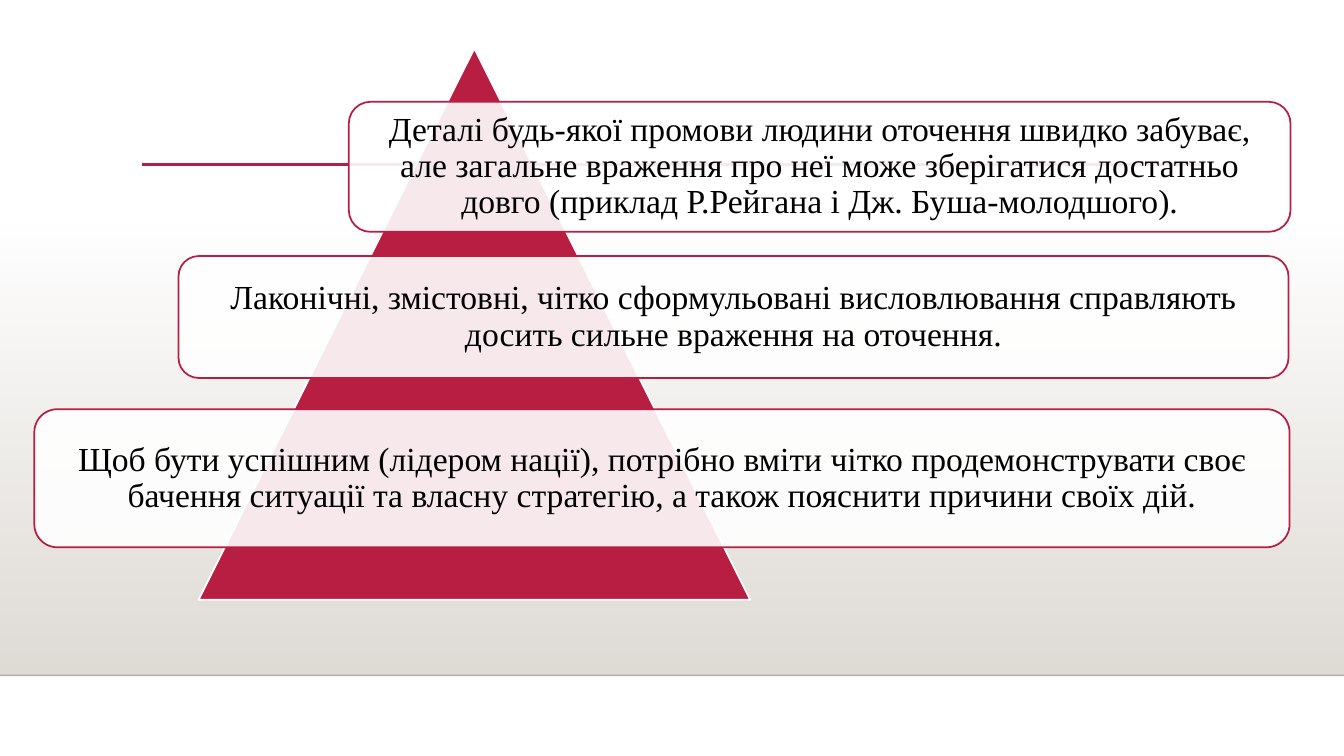
from lxml import etree
from pptx import Presentation
from pptx.dml.color import RGBColor
from pptx.enum import shapes, text
from pptx.oxml import ns
from pptx.util import Inches, Pt

CRIMSON, WHITE, BLACK, SAND = "B71E42", "FFFFFF", "000000", "DFDBD5"
FONT = "Times New Roman"
WIDTH, HEIGHT = 13.33, 7.5

STATEMENTS = [
    ((3.46, 1.01, 9.34, 1.29),
     "Деталі будь-якої промови людини оточення швидко забуває, "
     "але загальне враження про неї може зберігатися достатньо "
     "довго (приклад Р.Рейгана і Дж. Буша-молодшого)."),
    ((1.77, 2.54, 11.01, 1.21),
     "Лаконічні, змістовні, чітко сформульовані висловлювання справляють "
     "досить сильне враження на оточення."),
    ((0.34, 4.06, 12.45, 1.37),
     "Щоб бути успішним (лідером нації), потрібно вміти чітко "
     "продемонструвати своє бачення ситуації та власну стратегію, "
     "а також пояснити причини своїх дій."),
]
RULES = [
    (0, WIDTH, 6.7, BLACK, 1, 20),
    (1.41, 11.92, 1.63, CRIMSON, 2.5, 100),
]


def paint(color_format, color, opacity=100):
    color_format.rgb = RGBColor.from_string(color)


def set_opacity(color_element, percent):
    alpha = etree.SubElement(color_element, ns.qn("a:alpha"))
    alpha.set("val", str(percent * 1000))


def add_shape(kind, box, fill=None, line=None):
    shape = slide.shapes.add_shape(kind, *map(Inches, box))
    shape.shadow.inherit = False
    if fill:
        shape.fill.solid()
        paint(shape.fill.fore_color, fill)
    if line:
        paint(shape.line.color, line)
        shape.line.width = Pt(1.25)
    else:
        shape.line.fill.background()
    return shape


def add_backdrop():
    backdrop = add_shape(shapes.MSO_SHAPE.RECTANGLE, (0, 2.21, WIDTH, 4.49))
    backdrop.fill.gradient()
    backdrop.fill.gradient_angle = 270
    for stop, opacity in zip(backdrop.fill.gradient_stops, (0, 100)):
        paint(stop.color, SAND)
    colors = backdrop._element.spPr.iter(ns.qn("a:srgbClr"))
    for color_element, opacity in zip(list(colors), (0, 100)):
        set_opacity(color_element, opacity)


def add_rule(left, right, y, color, weight, opacity):
    rule = slide.shapes.add_connector(
        shapes.MSO_CONNECTOR.STRAIGHT, *map(Inches, (left, y, right, y)))
    paint(rule.line.color, color)
    rule.line.width = Pt(weight)
    properties = rule._element.spPr
    if opacity < 100:
        set_opacity(properties.find(".//" + ns.qn("a:srgbClr")), opacity)
    etree.SubElement(properties, ns.qn("a:effectLst"))


def add_statement(box, wording):
    card = add_shape(shapes.MSO_SHAPE.ROUNDED_RECTANGLE, box, WHITE, CRIMSON)
    set_opacity(card._element.spPr.find(".//" + ns.qn("a:srgbClr")), 90)
    frame = card.text_frame
    frame.word_wrap = True
    frame.vertical_anchor = text.MSO_ANCHOR.MIDDLE
    frame.margin_left = frame.margin_right = Inches(0.1)
    frame.margin_top = frame.margin_bottom = Inches(0.1)
    paragraph = frame.paragraphs[0]
    paragraph.alignment = text.PP_ALIGN.CENTER
    paragraph.line_spacing = 0.9
    run = paragraph.add_run()
    run.text = wording
    run.font.name = FONT
    run.font.size = Pt(24)
    paint(run.font.color, BLACK)


presentation = Presentation()
presentation.slide_width = Inches(WIDTH)
presentation.slide_height = Inches(HEIGHT)
slide = presentation.slides.add_slide(presentation.slide_layouts[6])

add_backdrop()
for rule_values in RULES:
    add_rule(*rule_values)
add_shape(shapes.MSO_SHAPE.ISOSCELES_TRIANGLE, (1.97, 0.48, 5.47, 5.47),
          CRIMSON, WHITE)
for statement_box, statement in STATEMENTS:
    add_statement(statement_box, statement)

presentation.save("out.pptx")
